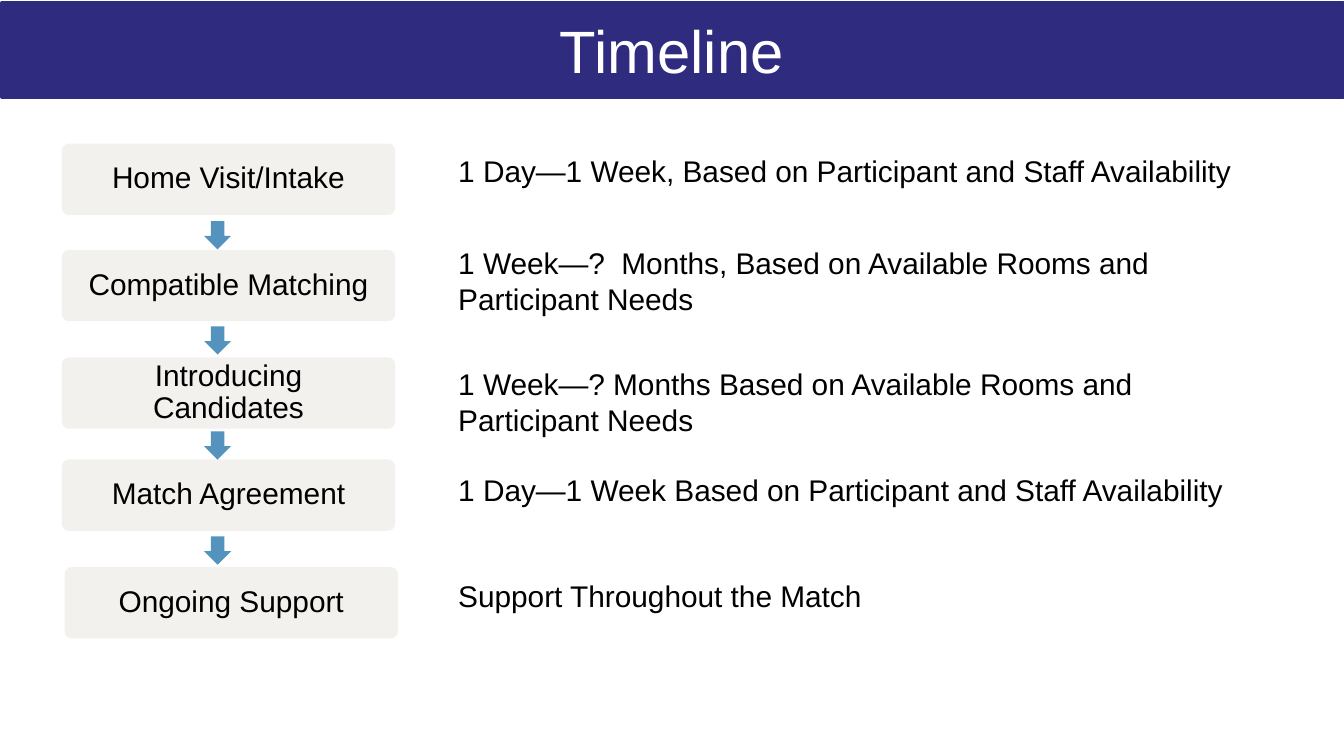
import pptx
import pptx.util
import pptx.dml.color
import pptx.enum.shapes
import pptx.enum.text

Pt = pptx.util.Pt
KIND = pptx.enum.shapes.MSO_SHAPE
ALIGN = pptx.enum.text.PP_ALIGN
ANCHOR = pptx.enum.text.MSO_ANCHOR

STEPS = [
    ("Home Visit/Intake", 33.1, 77,
     "1 Day—1 Week, Based on Participant and Staff Availability", 77, 36.7),
    ("Compatible Matching", 33.1, 133.9,
     "1 Week—?  Months, Based on Available Rooms and Participant Needs", 126, 33.1),
    ("Introducing Candidates", 33.1, 191.5,
     "1 Week—? Months Based on Available Rooms and Participant Needs", 190.8, 31.7),
    ("Match Agreement", 33.1, 246.2,
     "1 Day—1 Week Based on Participant and Staff Availability", 247.7, 46.1),
    ("Ongoing Support", 34.6, 303.8,
     "Support Throughout the Match", 304.6, 28.8),
]


def tint(code):
    return pptx.dml.color.RGBColor.from_string(code)


def apply(item, form):
    for name, value in form.items():
        setattr(item, name, value)


def write(shape, text, size, color, pad, frame, para):
    body = shape.text_frame
    sides = ("left", "top", "right", "bottom")
    apply(body, {f"margin_{side}": Pt(gap) for side, gap in zip(sides, pad)})
    apply(body, {"word_wrap": True, **frame})
    line = body.paragraphs[0]
    line.text = text
    apply(line, para)
    apply(line.font, {"name": "Arial", "size": Pt(size)})
    line.font.color.rgb = tint(color)


def draw(slide, kind, box, fill):
    shape = slide.shapes.add_shape(kind, *map(Pt, box))
    shape.shadow.inherit = False
    shape.fill.solid()
    shape.fill.fore_color.rgb = tint(fill)
    shape.line.fill.background()
    return shape


def banner(slide, left, top, width, height):
    bar = draw(slide, KIND.RECTANGLE, (left, top, width, height), "2F2B7F")
    bar.line.color.rgb = tint("2F2B7F")
    bar.line.width = Pt(2)
    title = slide.shapes.add_textbox(
        Pt(left + 177.5), Pt(top + 2.1), Pt(width - 355.7), Pt(46.1))
    write(title, "Timeline", 32, "FFFFFF", (7.2, 3.6, 7.2, 3.6), {},
          {"alignment": ALIGN.CENTER})


def step(slide, left, top, width, height, text):
    card = draw(slide, KIND.ROUNDED_RECTANGLE, (left, top, width, height), "F3F1ED")
    card.adjustments[0] = 0.1
    write(card, text, 16, "000000", (9, 5.8, 9, 5.8),
          {"vertical_anchor": ANCHOR.MIDDLE},
          {"alignment": ALIGN.CENTER, "line_spacing": 0.9, "space_after": Pt(5.6)})


def note(slide, left, top, width, height, text):
    box = slide.shapes.add_textbox(Pt(left), Pt(top), Pt(width), Pt(height))
    write(box, text, 16, "000000", (5, 5, 5, 5),
          {"vertical_anchor": ANCHOR.TOP},
          {"alignment": ALIGN.LEFT, "space_after": Pt(10.6)})


def arrows(slide, left, top, width, height, pitch, count):
    for i in range(count):
        draw(slide, KIND.DOWN_ARROW, (left, top + i * pitch, width, height), "5393BD")


def main():
    deck = pptx.Presentation()
    apply(deck, {"slide_width": Pt(720), "slide_height": Pt(405)})
    slide = deck.slides.add_slide(deck.slide_layouts[6])
    for label, left, top, text, rise, tall in STEPS:
        step(slide, left, top, 178.6, 38.2, label)
        note(slide, 240.5, rise, 426.2, tall, text)
    arrows(slide, 109.4, 118.5, 14.4, 15.1, 56.3, len(STEPS) - 1)
    banner(slide, 1, 1.5, 718.6, 50.4)
    deck.save("out.pptx")


if __name__ == "__main__":
    main()
